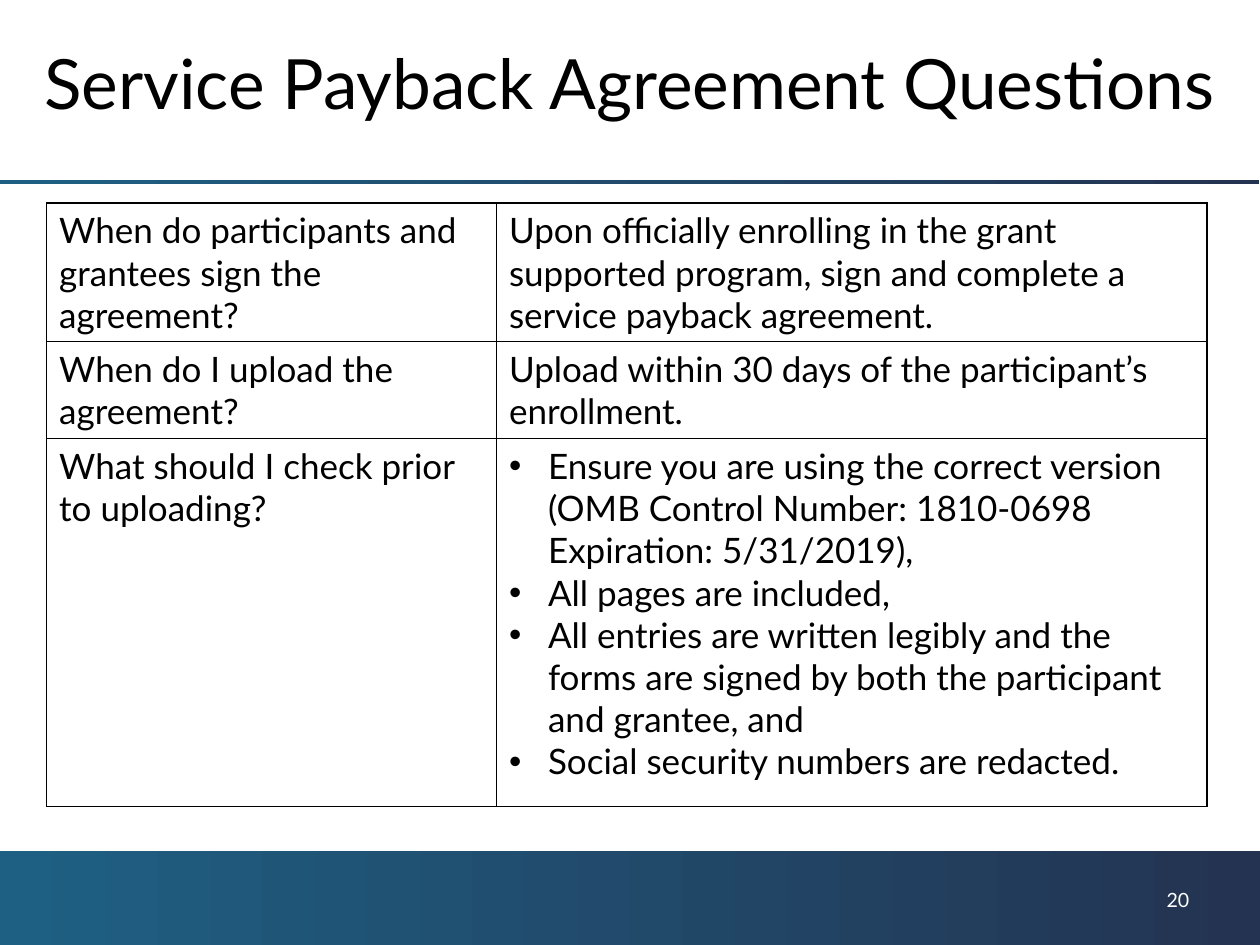
from dataclasses import dataclass

from lxml import etree
from pptx import Presentation
from pptx import util as u
from pptx.dml.color import RGBColor
from pptx.enum import shapes, text
from pptx.oxml.ns import qn


@dataclass(frozen=True)
class Theme:
    font: str = "Lato"
    ink: str = "000000"
    light: str = "FFFFFF"
    band_start: str = "1E6083"
    band_end: str = "243352"
    title_size: float = 39.6
    body_size: float = 20
    number_size: float = 11.2
    border_width: float = 1
    bullet_indent: float = 0.31


class SlideBuilder:
    def __init__(self, page, theme):
        self.page = page
        self.theme = theme

    def format_text(self, target, size, color):
        values = {"name": self.theme.font, "size": u.Pt(size), "bold": False}
        for name, value in values.items():
            setattr(target.font, name, value)
        target.font.color.rgb = RGBColor.from_string(color)

    def title(self, wording, left, top, width, height):
        box = self.page.shapes.title
        place = {"left": left, "top": top, "width": width, "height": height}
        for name, value in place.items():
            setattr(box, name, u.Inches(value))
        frame = box.text_frame
        frame.text = wording
        layout = {
            "word_wrap": True,
            "auto_size": text.MSO_AUTO_SIZE.NONE,
            "vertical_anchor": text.MSO_ANCHOR.MIDDLE,
        }
        for name, value in layout.items():
            setattr(frame, name, value)
        para = frame.paragraphs[0]
        para.alignment = text.PP_ALIGN.LEFT
        self.format_text(para.runs[0], self.theme.title_size, self.theme.ink)

    def band(self, left, top, width, height):
        box = self.page.shapes.add_shape(
            shapes.MSO_SHAPE.RECTANGLE, *map(u.Inches, (left, top, width, height))
        )
        box.shadow.inherit = False
        box.line.fill.background()
        box.fill.gradient()
        box.fill.gradient_angle = 0
        colors = (self.theme.band_start, self.theme.band_end)
        for position, (stop, color) in enumerate(zip(box.fill.gradient_stops, colors)):
            stop.position = position
            stop.color.rgb = RGBColor.from_string(color)

    def label(self, wording, left, top, width, height):
        box = self.page.shapes.add_textbox(*map(u.Inches, (left, top, width, height)))
        box.text_frame.word_wrap = True
        span = box.text_frame.paragraphs[0].add_run()
        span.text = wording
        self.format_text(span, self.theme.number_size, self.theme.light)

    def bullet(self, para):
        properties = para._p.get_or_add_pPr()
        indent = u.Inches(self.theme.bullet_indent)
        properties.set("marL", str(indent))
        properties.set("indent", str(-indent))
        etree.SubElement(properties, qn("a:buFont"), typeface="Arial")
        etree.SubElement(properties, qn("a:buChar"), char="•")

    def borders(self, cell):
        properties = cell._tc.get_or_add_tcPr()
        for position, side in enumerate(("lnL", "lnR", "lnT", "lnB")):
            line = etree.Element(
                qn(f"a:{side}"), w=str(u.Pt(self.theme.border_width))
            )
            fill = etree.SubElement(line, qn("a:solidFill"))
            etree.SubElement(fill, qn("a:srgbClr"), val=self.theme.ink)
            properties.insert(position, line)

    def fill_cell(self, cell, content):
        cell.fill.background()
        self.borders(cell)
        bulleted = isinstance(content, list)
        lines = content if bulleted else [content]
        cell.text = "\n".join(lines)
        for para in cell.text_frame.paragraphs:
            if bulleted:
                self.bullet(para)
            self.format_text(para, self.theme.body_size, self.theme.ink)
            self.format_text(para.runs[0], self.theme.body_size, self.theme.ink)

    def table(self, rows, left, top, widths, heights):
        frame = self.page.shapes.add_table(
            len(rows), len(widths),
            *map(u.Inches, (left, top, sum(widths), sum(heights))),
        )
        grid = frame.table
        grid.first_row = False
        grid.horz_banding = False
        for column, width in zip(grid.columns, widths):
            column.width = u.Inches(width)
        for row, height, contents in zip(grid.rows, heights, rows):
            row.height = u.Inches(height)
            for cell, content in zip(row.cells, contents):
                self.fill_cell(cell, content)


QUESTIONS = [
    (
        "When do participants and grantees sign the agreement?",
        "Upon officially enrolling in the grant supported program, "
        "sign and complete a service payback agreement.",
    ),
    (
        "When do I upload the agreement?",
        "Upload within 30 days of the participant’s enrollment.",
    ),
    (
        "What should I check prior to uploading?",
        [
            "Ensure you are using the correct version "
            "(OMB Control Number: 1810-0698 Expiration: 5/31/2019),",
            "All pages are included,",
            "All entries are written legibly and the forms are signed "
            "by both the participant and grantee, and",
            "Social security numbers are redacted.",
        ],
    ),
]


def main():
    deck = Presentation()
    deck.slide_width, deck.slide_height = u.Inches(10), u.Inches(7.5)
    page = deck.slides.add_slide(deck.slide_layouts[5])
    builder = SlideBuilder(page, Theme())
    builder.band(0, 6.75, 10, 0.75)
    builder.band(-0.01, 1.43, 10, 0.03)
    builder.title("Service Payback Agreement Questions", 0.25, 0.11, 9.58, 1.08)
    builder.label("20", 9.16, 7, 0.58, 0.27)
    builder.table(QUESTIONS, 0.37, 1.61, (3.57, 5.64), (1.1, 0.77, 2.92))
    deck.save("out.pptx")


if __name__ == "__main__":
    main()
